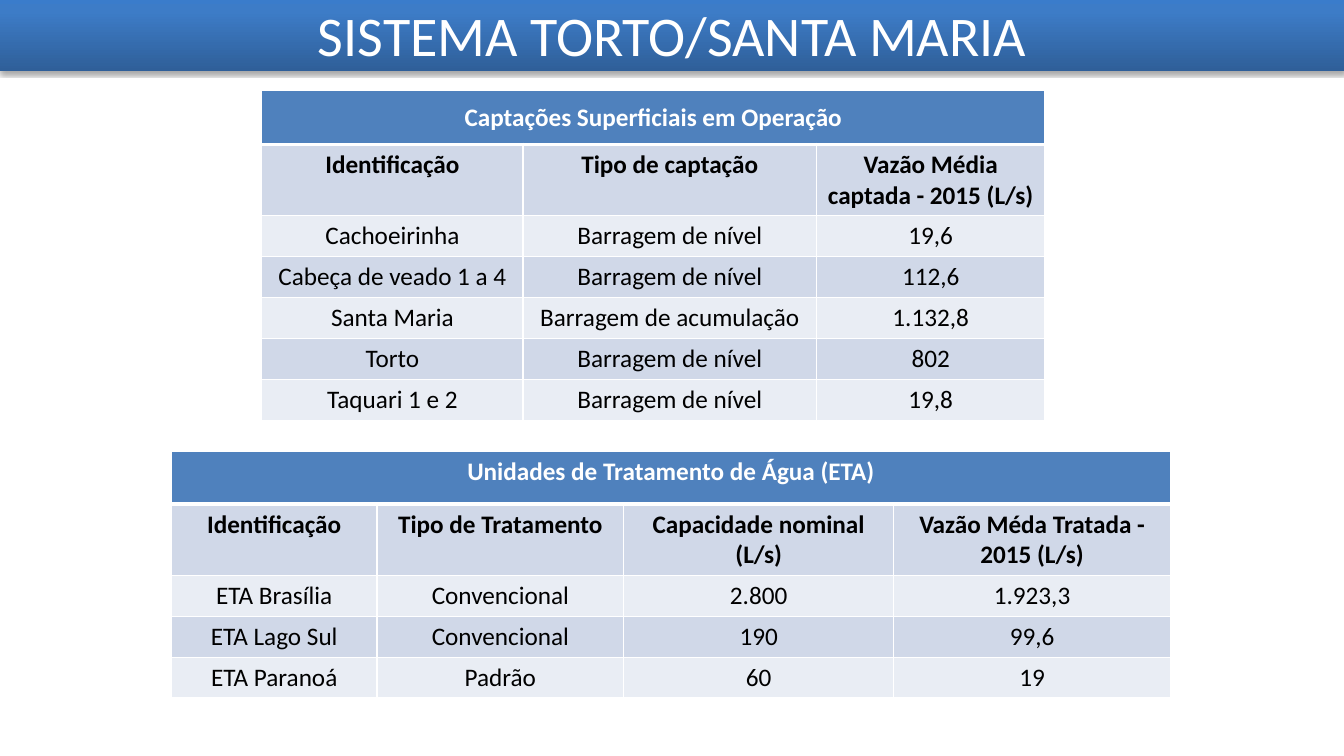
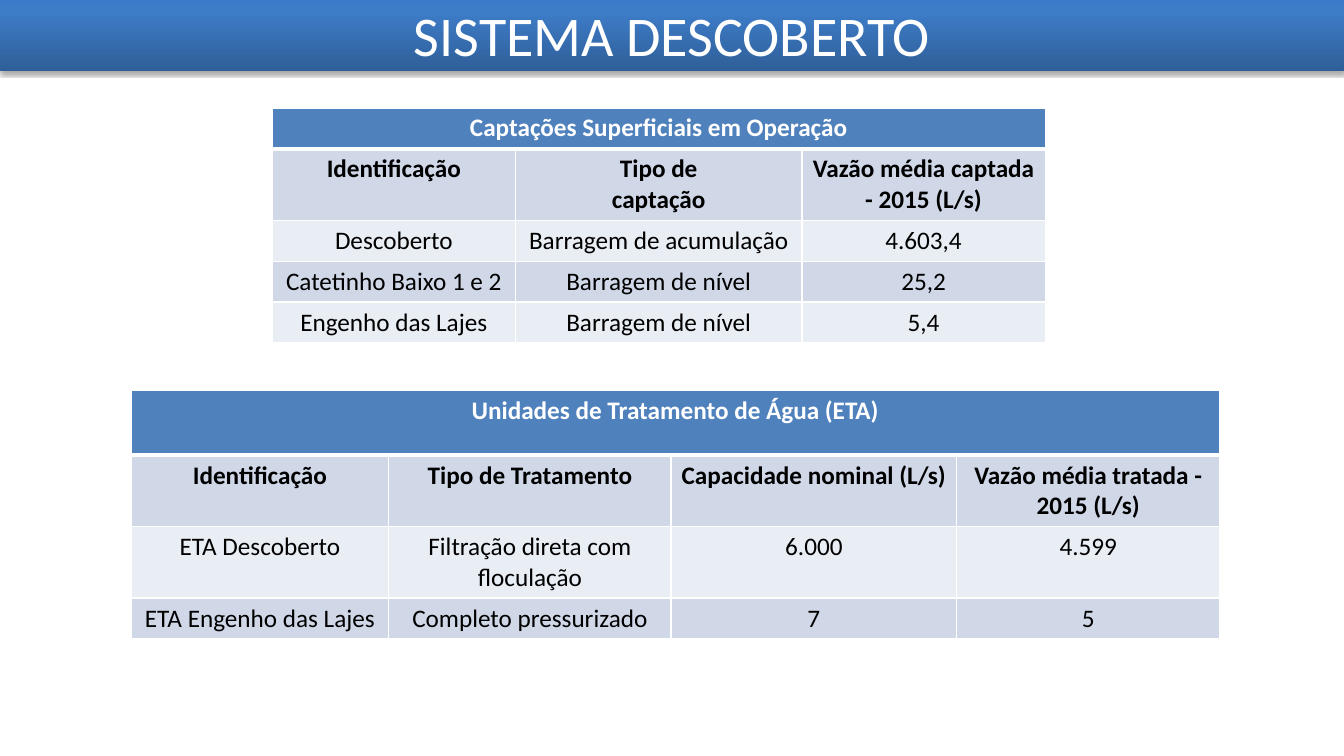
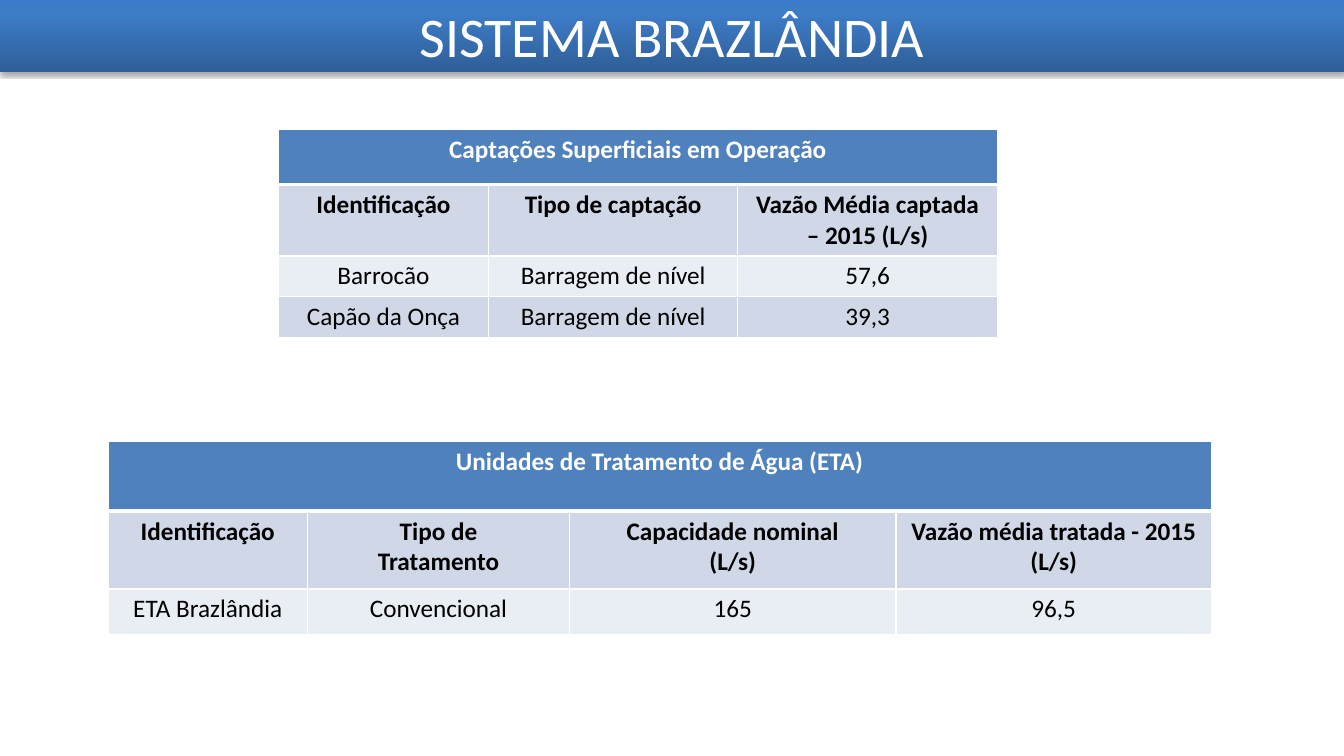
from dataclasses import dataclass
from itertools import chain

from pptx import Presentation
from pptx.dml.color import RGBColor
from pptx.enum.text import MSO_ANCHOR, MSO_AUTO_SIZE, PP_ALIGN
from pptx.oxml import parse_xml
from pptx.oxml.ns import nsdecls
from pptx.util import Cm, Pt


# Shared look
@dataclass(frozen=True)
class Theme:
    font: str = "Calibri"
    title_size: int = 40
    table_size: int = 18
    white: str = "FFFFFF"
    black: str = "000000"
    heading_fill: str = "4F81BD"
    dark_row: str = "D0D8E8"
    light_row: str = "E9EDF4"
    band_stops: tuple = ((0, "2F5F99"), (80, "3D7CC7"), (100, "3A7CCB"))
    thin_rule: float = 1
    thick_rule: float = 3


THEME = Theme()
SLIDE_WIDTH, SLIDE_HEIGHT = 33.87, 19.05
ONE_LINE, TWO_LINES = 1.03, 1.8  # row heights in cm


@dataclass(frozen=True)
class Grid:
    heading: str
    left: float
    top: float
    columns: tuple[float, ...]
    rows: tuple[tuple[str, ...], ...]  # the first row names the columns
    heading_height: float
    names_height: float = TWO_LINES
    body_heights: tuple[float, ...] = ()
    heading_anchor: MSO_ANCHOR = MSO_ANCHOR.TOP

    @property
    def heights(self) -> tuple[float, ...]:
        body = self.body_heights or (ONE_LINE,) * (len(self.rows) - 1)
        return (self.heading_height, self.names_height, *body)


@dataclass(frozen=True)
class SystemPage:
    title: str
    grids: tuple[Grid, ...]
    band_height: float = 1.7


# Content
INTAKES = "Captações Superficiais em Operação"
PLANTS = "Unidades de Tratamento de Água (ETA)"
LEVEL_DAM = "Barragem de nível"
STORAGE_DAM = "Barragem de acumulação"

PAGES = (
    SystemPage("SISTEMA TORTO/SANTA MARIA", (
        Grid(INTAKES, 6.6, 2.29, (6.58, 7.4, 5.75), (
            ("Identificação", "Tipo de captação", "Vazão Média captada - 2015 (L/s)"),
            ("Cachoeirinha", LEVEL_DAM, "19,6"),
            ("Cabeça de veado 1 a 4", LEVEL_DAM, "112,6"),
            ("Santa Maria", STORAGE_DAM, "1.132,8"),
            ("Torto", LEVEL_DAM, "802"),
            ("Taquari 1 e 2", LEVEL_DAM, "19,8"),
        ), heading_height=1.35, heading_anchor=MSO_ANCHOR.MIDDLE),
        Grid(PLANTS, 4.32, 11.38, (5.18, 6.22, 6.8, 6.98), (
            ("Identificação", "Tipo de Tratamento", "Capacidade nominal (L/s)",
             "Vazão Méda Tratada - 2015 (L/s)"),
            ("ETA Brasília", "Convencional", "2.800", "1.923,3"),
            ("ETA Lago Sul", "Convencional", "190", "99,6"),
            ("ETA Paranoá", "Padrão", "60", "19"),
        ), heading_height=1.32),
    )),
    SystemPage("SISTEMA DESCOBERTO", (
        Grid(PLANTS, 3.3, 9.84, (6.5, 7.11, 7.2, 6.63), (
            ("Identificação", "Tipo de Tratamento", "Capacidade nominal (L/s)",
             "Vazão média tratada - 2015 (L/s)"),
            ("ETA Descoberto", "Filtração direta com floculação", "6.000", "4.599"),
            ("ETA Engenho das Lajes", "Completo pressurizado", "7", "5"),
        ), heading_height=1.63, body_heights=(TWO_LINES, ONE_LINE)),
        Grid(INTAKES, 6.86, 2.72, (6.13, 7.22, 6.13), (
            ("Identificação", "Tipo de\ncaptação", "Vazão média captada - 2015 (L/s)"),
            ("Descoberto", STORAGE_DAM, "4.603,4"),
            ("Catetinho Baixo 1 e 2", LEVEL_DAM, "25,2"),
            ("Engenho das Lajes", LEVEL_DAM, "5,4"),
        ), heading_height=ONE_LINE),
    )),
    SystemPage("SISTEMA BRAZLÂNDIA", (
        Grid(PLANTS, 2.72, 11.13, (5.03, 6.6, 8.23, 7.95), (
            ("Identificação", "Tipo de\nTratamento", "Capacidade nominal\n(L/s)",
             "Vazão média tratada - 2015 (L/s)"),
            ("ETA Brazlândia", "Convencional", "165", "96,5"),
        ), heading_height=1.75, names_height=1.96, body_heights=(1.14,)),
        Grid(INTAKES, 7.01, 3.25, (5.31, 6.27, 6.55), (
            ("Identificação", "Tipo de captação", "Vazão Média captada – 2015 (L/s)"),
            ("Barrocão", LEVEL_DAM, "57,6"),
            ("Capão da Onça", LEVEL_DAM, "39,3"),
        ), heading_height=1.4),
    ), band_height=1.75),
)


# Drawing
def write_text(frame, text: str, *, size: float, color: str, bold: bool = False) -> None:
    for index, line in enumerate(text.split("\n")):
        para = frame.add_paragraph() if index else frame.paragraphs[0]
        para.alignment = PP_ALIGN.CENTER
        span = para.add_run()
        span.text = line
        span.font.name = THEME.font
        span.font.size = Pt(size)
        span.font.bold = bold
        span.font.color.rgb = RGBColor.from_string(color)


def style_band(band) -> None:
    """Give the title its gradient and soft shadow."""
    stops = "".join(
        f'<a:gs pos="{position * 1000}"><a:srgbClr val="{color}"/></a:gs>'
        for position, color in THEME.band_stops
    )
    parts = (
        f'<a:gradFill {nsdecls("a")} rotWithShape="1"><a:gsLst>{stops}</a:gsLst>'
        '<a:lin ang="16200000" scaled="0"/></a:gradFill>',
        f'<a:ln {nsdecls("a")}><a:noFill/></a:ln>',
        f'<a:effectLst {nsdecls("a")}><a:outerShdw blurRad="{Pt(3.1)}" dist="{Pt(1.8)}" '
        f'dir="5400000" rotWithShape="0"><a:srgbClr val="{THEME.black}">'
        '<a:alpha val="35000"/></a:srgbClr></a:outerShdw></a:effectLst>',
    )
    for part in parts:
        band._element.spPr.append(parse_xml(part))


def draw_title(page, text: str, height: float) -> None:
    band = page.shapes.title
    band.left, band.top, band.width, band.height = 0, 0, Cm(SLIDE_WIDTH), Cm(height)
    style_band(band)
    frame = band.text_frame
    frame.margin_left = frame.margin_top = frame.margin_right = frame.margin_bottom = 0
    frame.word_wrap = True
    frame.vertical_anchor = MSO_ANCHOR.MIDDLE
    frame.auto_size = MSO_AUTO_SIZE.SHAPE_TO_FIT_TEXT
    write_text(frame, text, size=THEME.title_size, color=THEME.white)


def style_cell(cell, row: int) -> None:
    """Draw white borders, thick below the heading, and fill by row."""
    top = THEME.thick_rule if row == 1 else THEME.thin_rule
    bottom = THEME.thick_rule if row == 0 else THEME.thin_rule
    sides = {"L": THEME.thin_rule, "R": THEME.thin_rule, "T": top, "B": bottom}
    properties = cell._tc.get_or_add_tcPr()
    for side, width in sides.items():
        properties.append(parse_xml(
            f'<a:ln{side} {nsdecls("a")} w="{Pt(width)}"><a:solidFill>'
            f'<a:srgbClr val="{THEME.white}"/></a:solidFill></a:ln{side}>'
        ))
    banding = THEME.dark_row if row % 2 else THEME.light_row
    cell.fill.solid()
    cell.fill.fore_color.rgb = RGBColor.from_string(banding if row else THEME.heading_fill)


def draw_grid(page, grid: Grid) -> None:
    table = page.shapes.add_table(
        len(grid.heights), len(grid.columns), Cm(grid.left), Cm(grid.top),
        Cm(sum(grid.columns)), Cm(sum(grid.heights)),
    ).table
    table.horz_banding = False
    for column, width in zip(table.columns, grid.columns):
        column.width = Cm(width)
    for row, height in zip(table.rows, grid.heights):
        row.height = Cm(height)

    heading = table.cell(0, 0)
    heading.merge(table.cell(0, len(grid.columns) - 1))
    heading.vertical_anchor = grid.heading_anchor
    for row, texts in enumerate(chain([(grid.heading,)], grid.rows)):
        for cell in table.rows[row].cells:
            style_cell(cell, row)
        for column, text in enumerate(texts):
            write_text(
                table.cell(row, column).text_frame, text, size=THEME.table_size,
                color=THEME.black if row else THEME.white, bold=row < 2,
            )


def main() -> None:
    deck = Presentation()
    deck.slide_width, deck.slide_height = Cm(SLIDE_WIDTH), Cm(SLIDE_HEIGHT)
    title_only = deck.slide_layouts[5]
    for system in PAGES:
        page = deck.slides.add_slide(title_only)
        draw_title(page, system.title, system.band_height)
        for grid in system.grids:
            draw_grid(page, grid)
    deck.save("out.pptx")


if __name__ == "__main__":
    main()
